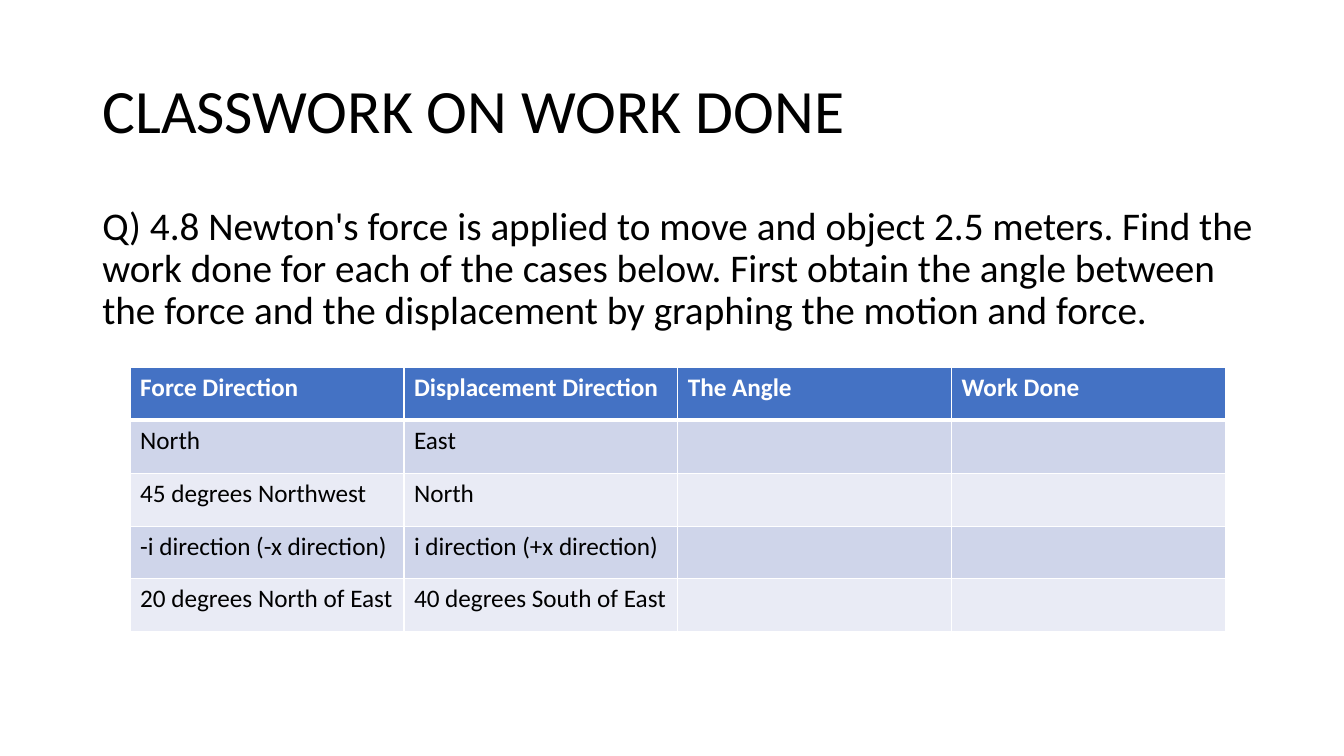
from lxml import etree
from pptx import Presentation
from pptx.dml.color import RGBColor
from pptx.enum import text
from pptx.oxml import ns
from pptx.util import Cm, Pt

TITLE = "CLASSWORK ON WORK DONE"
QUESTION = (
    "Q) 4.8 Newton's force is applied to move and object 2.5 meters. "
    "Find the work done for each of the cases below. First obtain the angle "
    "between the force and the displacement by graphing the motion and force."
)
CASES = [
    ("Force Direction", "Displacement Direction", "The Angle", "Work Done"),
    ("North", "East", "", ""),
    ("45 degrees Northwest", "North", "", ""),
    ("-i direction (-x direction)", "i direction (+x direction)", "", ""),
    ("20 degrees North of East", "40 degrees South of East", "", ""),
]
FONT = "Calibri"
BLACK, WHITE = "000000", "FFFFFF"
HEADER_FILL, BAND_FILLS = "4472C4", ("CFD5EA", "E9EBF5")
LEFT = Cm(2.33)
COLUMN_WIDTH = Cm(6.9)
ROW_HEIGHTS = [Cm(1.34), Cm(1.34), Cm(1.34), Cm(1.3), Cm(1.34)]


def color(value):
    return RGBColor.from_string(value)


def style_runs(paragraph, size, value, bold=False):
    for run in paragraph.runs:
        run.font.name = FONT
        run.font.size = Pt(size)
        run.font.bold = bold
        run.font.color.rgb = color(value)


def add_text(slide, top, width, height, content, size, anchor, space_before=0):
    frame = slide.shapes.add_textbox(LEFT, top, width, height).text_frame
    frame.word_wrap = True
    frame.vertical_anchor = anchor
    frame.text = content
    paragraph = frame.paragraphs[0]
    paragraph.line_spacing = 0.9
    paragraph.space_before = Pt(space_before)
    style_runs(paragraph, size, BLACK)


def set_border(cell, side, points):
    """Draw a white border on one side (L, R, T or B); call before filling."""
    line = etree.SubElement(cell._tc.get_or_add_tcPr(), ns.qn(f"a:ln{side}"),
                            w=str(Pt(points)))
    fill = etree.SubElement(line, ns.qn("a:solidFill"))
    etree.SubElement(fill, ns.qn("a:srgbClr"), val=WHITE)


def add_case_table(slide):
    frame = slide.shapes.add_table(
        len(CASES), len(CASES[0]), Cm(3.28), Cm(9.25),
        COLUMN_WIDTH * len(CASES[0]), sum(ROW_HEIGHTS))
    table = frame.table
    for column in table.columns:
        column.width = COLUMN_WIDTH
    for row_index, values in enumerate(CASES):
        header = row_index == 0
        table.rows[row_index].height = ROW_HEIGHTS[row_index]
        fill = HEADER_FILL if header else BAND_FILLS[(row_index - 1) % 2]
        borders = {"L": 1, "R": 1, "T": 3 if row_index == 1 else 1,
                   "B": 3 if header else 1}
        for column_index, value in enumerate(values):
            cell = table.cell(row_index, column_index)
            for side, points in borders.items():
                set_border(cell, side, points)
            cell.fill.solid()
            cell.fill.fore_color.rgb = color(fill)
            cell.text_frame.text = value
            style_runs(cell.text_frame.paragraphs[0], 18,
                       WHITE if header else BLACK, header)


def main():
    presentation = Presentation()
    presentation.slide_width = Cm(33.87)
    presentation.slide_height = Cm(19.05)
    slide = presentation.slides.add_slide(presentation.slide_layouts[6])
    add_text(slide, Cm(1.01), Cm(29.21), Cm(3.68), TITLE, 44,
             text.MSO_ANCHOR.MIDDLE)
    add_text(slide, Cm(5.07), Cm(29.74), Cm(4.14), QUESTION, 28,
             text.MSO_ANCHOR.TOP, space_before=10)
    add_case_table(slide)
    presentation.save("out.pptx")


if __name__ == "__main__":
    main()
